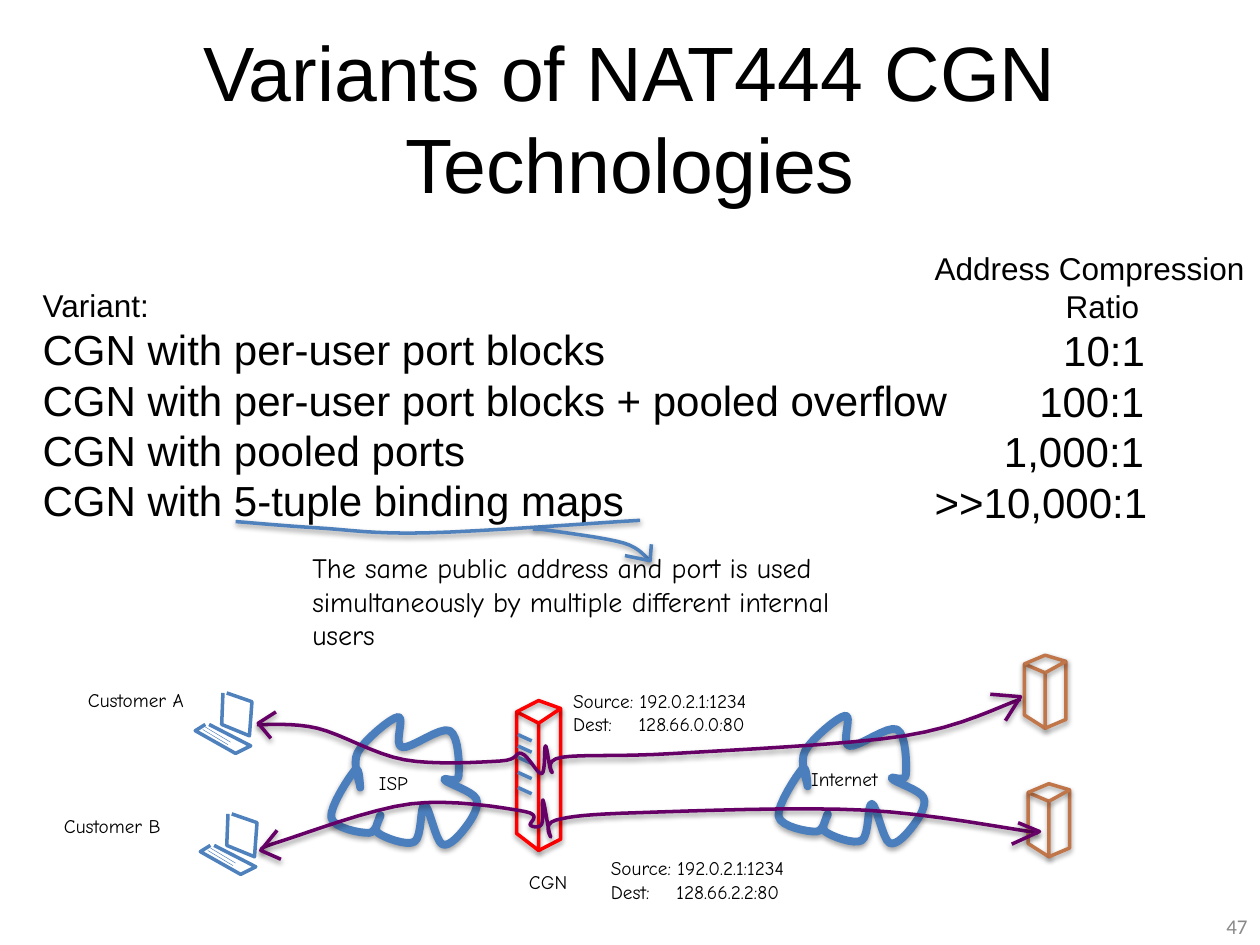
"""Build the slide on variants of NAT444 CGN technologies."""
from lxml.etree import SubElement
from pptx import Presentation
from pptx.dml.color import RGBColor
from pptx.enum.text import MSO_ANCHOR, PP_ALIGN
from pptx.oxml.ns import qn
from pptx.util import Inches, Pt

BLUE, CLOUD_BLUE, RED, BROWN, PURPLE = "4F81BD", "4B7EBC", "FF0000", "C1764A", "660066"
HAND = "Comic Neue"
CURVE_STEPS = 8

TITLE = "Variants of NAT444 CGN Technologies"
VARIANTS = [
    ("Variant:", 18),
    ("CGN with per-user port blocks", 24),
    ("CGN with per-user port blocks + pooled overflow", 24),
    ("CGN with pooled ports", 24),
    ("CGN with 5-tuple binding maps", 24),
]
RATIOS = [
    ("Address Compression", 18),
    ("Ratio", 18, 1.04),
    ("10:1", 24, 1.02),
    ("100:1", 24, 0.83),
    ("1,000:1", 24, 0.55),
    (">>10,000:1", 24),
]
REMARK = ["The same public address and port is used",
          "simultaneously by multiple different internal", "users"]
LABELS = [
    ("ISP", 2.91, 6.07),
    ("Internet", 6.34, 6.04),
    ("CGN", 4.1, 6.86),
    ("Customer A", 0.6, 5.41),
    ("Customer B", 0.41, 6.41),
]
PACKETS = [("128.66.0.0:80", 4.45, 5.42), ("128.66.2.2:80", 4.75, 6.75)]

LAPTOPS = [(1.55, 5.5), (1.59, 6.46)]
SCREEN = [(0.22, 0), (0.21, 0.25), (0.43, 0.34), (0.45, 0.07), (0.25, 0)]
KEYBOARD = [(0.11, 0.25), (0.44, 0.42), (0.32, 0.48), (0, 0.3), (0.08, 0.25)]
KEY_ROWS = [(0.06, 0.29), (0.08, 0.27)]
GATEWAY = (4.1, 5.56, 0.35, 1.19, 0.09)
SERVERS = [(8.13, 5.2, 0.33, 0.58, 0.07), (8.16, 6.22, 0.33, 0.58, 0.07)]
SLOT_ROWS = [5.83, 5.92, 6.01, 6.13, 6.25]
CLOUDS = [(6.18, 5.68), (2.63, 5.69)]
CLOUD = [
    (1.01, 0.47), (0.94, 0.11), (0.56, 0.24), (0.53, 0), (0.21, 0.28), (0.23, 0.56), (0.19, 0.42),
    (0, 0.8), (0.3, 0.92), (0.39, 0.78), (0.37, 0.92), (0.66, 0.99), (0.74, 0.7), (0.88, 1.01),
    (1.07, 0.87), (1.15, 0.65), (0.9, 0.5),
]
FLOWS = [
    [(2.04, 5.75), (2.52, 5.78), (3.21, 6.03), (3.97, 6.04), (4.14, 5.98), (4.3, 6.14),
     (4.33, 5.92), (4.38, 6.13), (4.46, 6.01), (5.35, 5.98), (7.18, 5.84), (8.1, 5.55)],
    [(2.07, 6.75), (2.22, 6.68), (3.26, 6.38), (4.16, 6.44), (4.21, 6.55), (4.3, 6.54),
     (4.31, 6.35), (4.37, 6.64), (4.41, 6.51), (5.07, 6.45), (6.86, 6.43), (8.24, 6.61)],
]
FLOW_HEADS = [
    [(2.19, 5.65), (2.05, 5.74), (2.15, 5.86)],
    [(7.86, 5.51), (8.1, 5.53), (7.98, 5.72)],
    [(2.2, 6.59), (2.07, 6.75), (2.23, 6.82)],
    [(8.08, 6.53), (8.25, 6.6), (8.03, 6.7)],
]
UNDERLINE = [
    [(1.87, 4.14), (2.52, 4.19), (3.38, 4.23), (5.08, 4.13)],
    [(4.23, 4.2), (4.36, 4.21), (4.95, 4.31), (5.16, 4.45)],
]
UNDERLINE_HEAD = [(5.17, 4.32), (5.16, 4.45), (4.96, 4.41)]


def color(code):
    return RGBColor.from_string(code)


def write(slide, lines, box, size=18, font="Arial", ink="000000", align=PP_ALIGN.LEFT,
          anchor=MSO_ANCHOR.TOP, tab=None):
    frame = slide.shapes.add_textbox(*map(Inches, box)).text_frame
    frame.word_wrap, frame.vertical_anchor = True, anchor
    for row, line in enumerate(lines):
        words, points, indent = (*line, 0)[:3] if isinstance(line, tuple) else (line, size, 0)
        paragraph = frame.paragraphs[0] if row == 0 else frame.add_paragraph()
        paragraph.alignment = align
        properties = paragraph._p.get_or_add_pPr()
        properties.set("marL", str(Inches(indent)))
        if tab:
            stops = SubElement(properties, qn("a:tabLst"))
            SubElement(stops, qn("a:tab"), pos=str(Inches(tab)), algn="l")
        run = paragraph.add_run()
        run.text = words
        run.font.size, run.font.name, run.font.color.rgb = Pt(points), font, color(ink)


def smooth(knots, close=False):
    ends = (knots[-1:], knots[:2]) if close else (knots[:1], knots[-1:])
    padded = ends[0] + knots + ends[1]
    curve = [padded[1]]
    for before, start, end, after in zip(padded, padded[1:], padded[2:], padded[3:]):
        for t in (step / CURVE_STEPS for step in range(1, CURVE_STEPS + 1)):
            curve.append(tuple(
                b + t * (c - a + t * (2 * a - 5 * b + 4 * c - d + t * (3 * b - a - 3 * c + d))) / 2
                for a, b, c, d in zip(before, start, end, after)))
    return curve


def draw(slide, stroke, ink, width=2, shift=(0, 0), close=False, shade=38):
    start, *rest = [(Inches(x + shift[0]), Inches(y + shift[1])) for x, y in stroke]
    builder = slide.shapes.build_freeform(*start, scale=1.0)
    builder.add_line_segments(rest, close=close)
    shape = builder.convert_to_shape()
    shape.fill.background()
    shape.line.color.rgb, shape.line.width = color(ink), Pt(width)
    shape.shadow.inherit = False
    if shade:
        effects = shape._element.spPr.find(qn("a:effectLst"))
        shadow = SubElement(effects, qn("a:outerShdw"), blurRad=str(Pt(3.1)), dist=str(Pt(1.6)),
                            dir="5400000", algn="ctr", rotWithShape="0")
        black = SubElement(shadow, qn("a:srgbClr"), val="000000")
        SubElement(black, qn("a:alpha"), val=str(shade * 1000))


def draw_tower(slide, left, top, width, height, slant, ink):
    middle, right, bottom = left + width / 2, left + width, top + height
    corner, front = (left, top + slant), (middle, top + 2 * slant)
    shoulder = (right, top + slant * 0.7)
    draw(slide, [corner, (left, bottom - 1.5 * slant), (middle, bottom), front, corner], ink)
    draw(slide, [corner, (middle, top), shoulder, (right, bottom - slant), (middle, bottom)], ink)
    draw(slide, [front, shoulder], ink)


def main():
    deck = Presentation()
    deck.slide_width, deck.slide_height = Inches(10), Inches(7.5)
    slide = deck.slides.add_slide(deck.slide_layouts[6])
    write(slide, [TITLE], (0.29, 0.3, 9.42, 1.25), size=44, align=PP_ALIGN.CENTER,
          anchor=MSO_ANCHOR.MIDDLE)
    write(slide, ["47"], (7.67, 7.15, 2.33, 0.4), size=12, font="Calibri", ink="898989",
          align=PP_ALIGN.RIGHT, anchor=MSO_ANCHOR.MIDDLE)
    write(slide, VARIANTS, (0.24, 2.22, 7.55, 2.02))
    write(slide, RATIOS, (7.32, 1.93, 2.7, 2.32))
    write(slide, REMARK, (2.38, 4.32, 5.78, 0.91), size=16, font=HAND)
    for corner in LAPTOPS:
        for outline in (SCREEN, KEYBOARD):
            draw(slide, outline, BLUE, shift=corner, shade=0)
        for x, y in KEY_ROWS:
            draw(slide, [(x, y), (x + 0.2, y + 0.12)], BLUE, 0.25, corner, shade=0)
    draw_tower(slide, *GATEWAY, RED)
    for y in SLOT_ROWS:
        draw(slide, [(4.11, y), (4.22, y + 0.05)], BLUE)
    for corner in CLOUDS:
        draw(slide, smooth(CLOUD, close=True), CLOUD_BLUE, 4.5, corner, close=True, shade=35)
    for label, left, top in LABELS:
        write(slide, [label], (left, top, 1.2, 0.29), size=11, font=HAND)
    for server in SERVERS:
        draw_tower(slide, *server, BROWN)
    for target, left, top in PACKETS:
        write(slide, ["Source: 192.0.2.1:1234", f"Dest:\t{target}"], (left, top, 2.14, 0.47),
              size=11, font=HAND, tab=0.52)
    for ink, lines, heads in ((PURPLE, FLOWS, FLOW_HEADS), (BLUE, UNDERLINE, [UNDERLINE_HEAD])):
        for stroke in [smooth(line) for line in lines] + heads:
            draw(slide, stroke, ink)
    deck.save("out.pptx")


if __name__ == "__main__":
    main()
